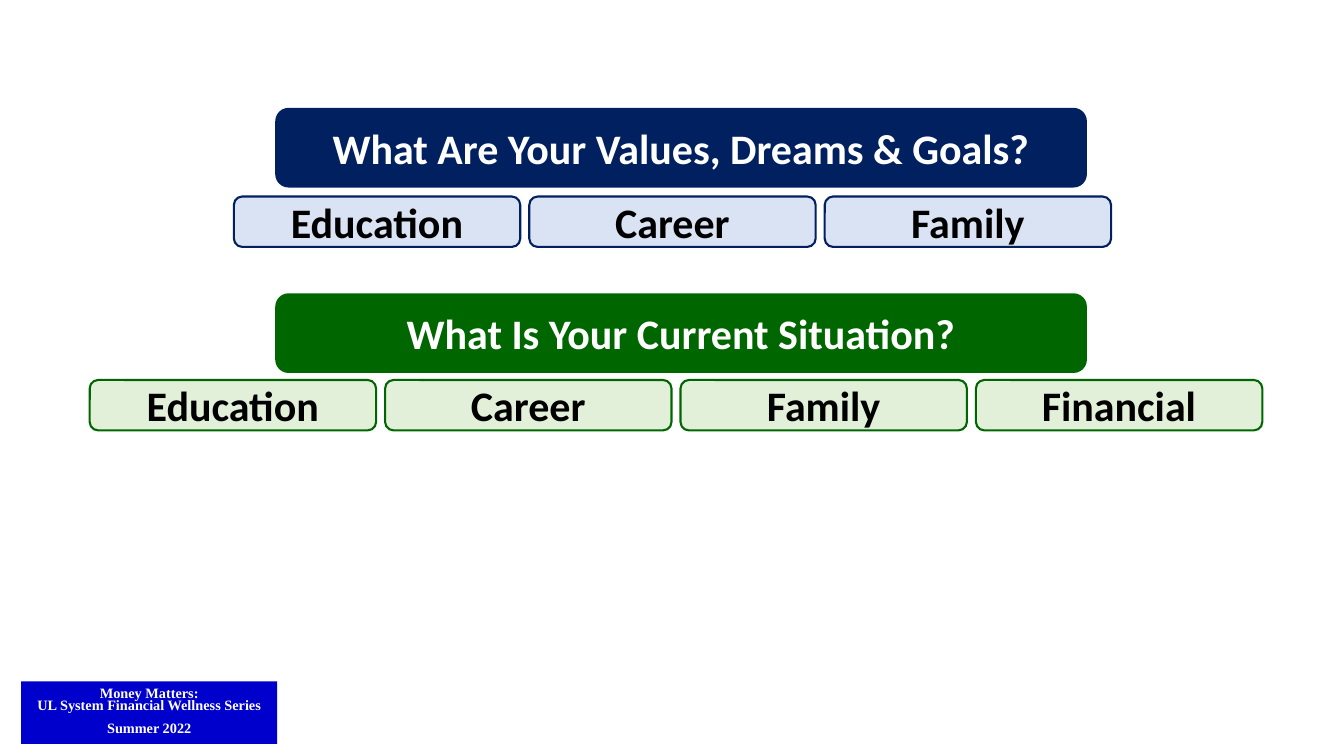
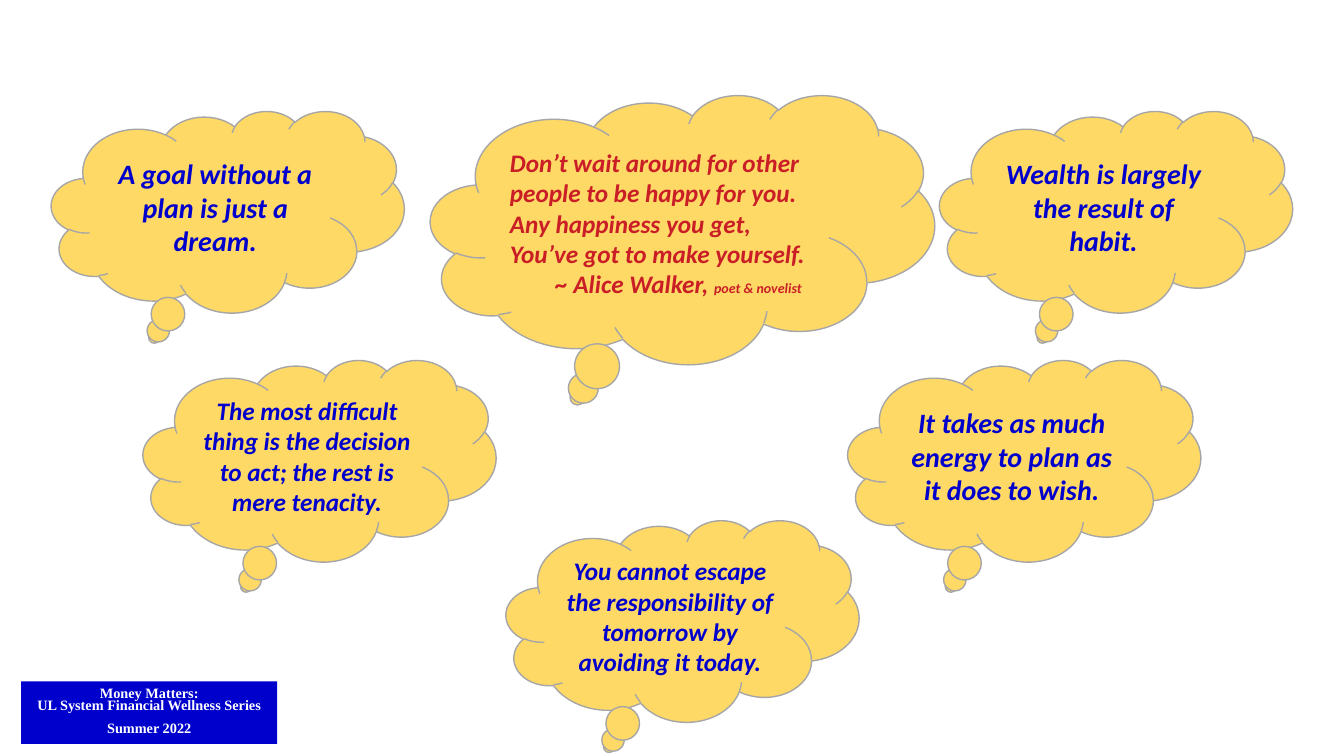
from dataclasses import dataclass

from pptx import Presentation
from pptx.dml.color import RGBColor
from pptx.enum.shapes import MSO_SHAPE
from pptx.enum.text import MSO_ANCHOR, PP_ALIGN
from pptx.util import Inches, Pt

RECTANGLE = MSO_SHAPE.RECTANGLE
ROUNDED = MSO_SHAPE.ROUNDED_RECTANGLE
CLOUD = MSO_SHAPE.CLOUD_CALLOUT
MIDDLE = MSO_ANCHOR.MIDDLE
CENTER = PP_ALIGN.CENTER
LEFT = PP_ALIGN.LEFT


@dataclass(frozen=True)
class Theme:
    body_font: str = "Calibri"
    footer_font: str = "Times New Roman"
    white: str = "FFFFFF"
    black: str = "000000"
    blue: str = "0000CC"
    navy: str = "002060"
    pale_blue: str = "DAE3F3"
    green: str = "006600"
    pale_green: str = "E2F0D9"
    yellow: str = "FFD966"
    gray: str = "A6A6A6"
    red: str = "CA1E27"
    box_size: float = 30
    quote_size: float = 20
    long_quote_size: float = 18
    credit_size: float = 10
    footer_size: float = 10.2


theme = Theme()


def add_box(slide, kind, left, top, width, height, fill, line=None, line_width=1):
    shape = slide.shapes.add_shape(
        kind, Inches(left), Inches(top), Inches(width), Inches(height))
    shape.shadow.inherit = False
    shape.fill.solid()
    shape.fill.fore_color.rgb = RGBColor.from_string(fill)
    if line:
        shape.line.color.rgb = RGBColor.from_string(line)
        shape.line.width = Pt(line_width)
    else:
        shape.line.fill.background()
    shape.text_frame.word_wrap = True
    shape.text_frame.vertical_anchor = MIDDLE
    return shape


def add_text(shape, lines, size, color, font=theme.body_font, italic=False,
             alignment=CENTER):
    frame = shape.text_frame
    for index, line in enumerate(lines):
        paragraph = frame.add_paragraph() if index else frame.paragraphs[0]
        paragraph.alignment = alignment
        for text, run_size in line if isinstance(line, list) else [(line, size)]:
            run = paragraph.add_run()
            run.text = text
            run.font.name = font
            run.font.size = Pt(run_size)
            run.font.bold = True
            run.font.italic = italic
            run.font.color.rgb = RGBColor.from_string(color)


presentation = Presentation()
presentation.slide_width = Inches(13.33)
presentation.slide_height = Inches(7.5)
layout = presentation.slide_layouts[6]

goals_slide = presentation.slides.add_slide(layout)

footer = add_box(goals_slide, RECTANGLE, 0.21, 6.76, 2.54, 0.62, theme.blue)
add_text(footer,
         ["Money Matters:", "UL System Financial Wellness Series", "Summer 2022"],
         theme.footer_size, theme.white, theme.footer_font)
for paragraph in footer.text_frame.paragraphs:
    paragraph.line_spacing = 0.7
footer.text_frame.paragraphs[2].space_before = Pt(8.2)
layout.shapes.element.append(footer.element)

box_width, box_step = 2.84, 2.93
sections = [
    ("What Are Your Values, Dreams & Goals?", 1.07, theme.navy,
     1.95, 2.32, theme.pale_blue, ["Education", "Career", "Family"]),
    ("What Is Your Current Situation?", 2.91, theme.green,
     3.77, 0.89, theme.pale_green, ["Education", "Career", "Family", "Financial"]),
]
for question, top, color, row_top, row_left, tint, topics in sections:
    header = add_box(goals_slide, ROUNDED, 2.73, top, 8.05, 0.79, color)
    add_text(header, [question], theme.box_size, theme.white)
    for column, topic in enumerate(topics):
        box = add_box(goals_slide, ROUNDED, row_left + column * box_step, row_top,
                      box_width, 0.5, tint, color, 1.5)
        add_text(box, [topic], theme.box_size, theme.black)

quotes_slide = presentation.slides.add_slide(layout)
quotes = [
    (0.51, 1.1, theme.quote_size, "A goal without a plan is just a dream."),
    (1.42, 3.57, theme.long_quote_size,
     "The most difficult thing is the decision to act; the rest is mere tenacity."),
    (9.32, 1.1, theme.quote_size, "Wealth is largely the result of habit."),
    (8.41, 3.57, theme.quote_size,
     "It takes as much energy to plan as it does to wish."),
    (5.02, 5.16, theme.long_quote_size,
     "You cannot escape the responsibility of tomorrow by avoiding it today."),
]
for left, top, size, quote in quotes:
    cloud = add_box(quotes_slide, CLOUD, left, top, 3.5, 2, theme.yellow, theme.gray)
    add_text(cloud, [quote], size, theme.blue, italic=True)

main_cloud = add_box(quotes_slide, CLOUD, 4.27, 0.94, 5, 2.67,
                     theme.yellow, theme.gray)
add_text(main_cloud,
         ["Don’t wait around for other people to be happy for you.",
          "Any happiness you get,",
          "You’ve got to make yourself.",
          [("~ Alice Walker, ", theme.long_quote_size),
           ("poet & novelist", theme.credit_size)]],
         theme.long_quote_size, theme.red, italic=True, alignment=LEFT)
credit = main_cloud.text_frame.paragraphs[-1]
credit.font.size = Pt(theme.long_quote_size)
credit_properties = credit._p.get_or_add_pPr()
credit_properties.set("marL", str(Inches(0.45)))

presentation.save("out.pptx")
